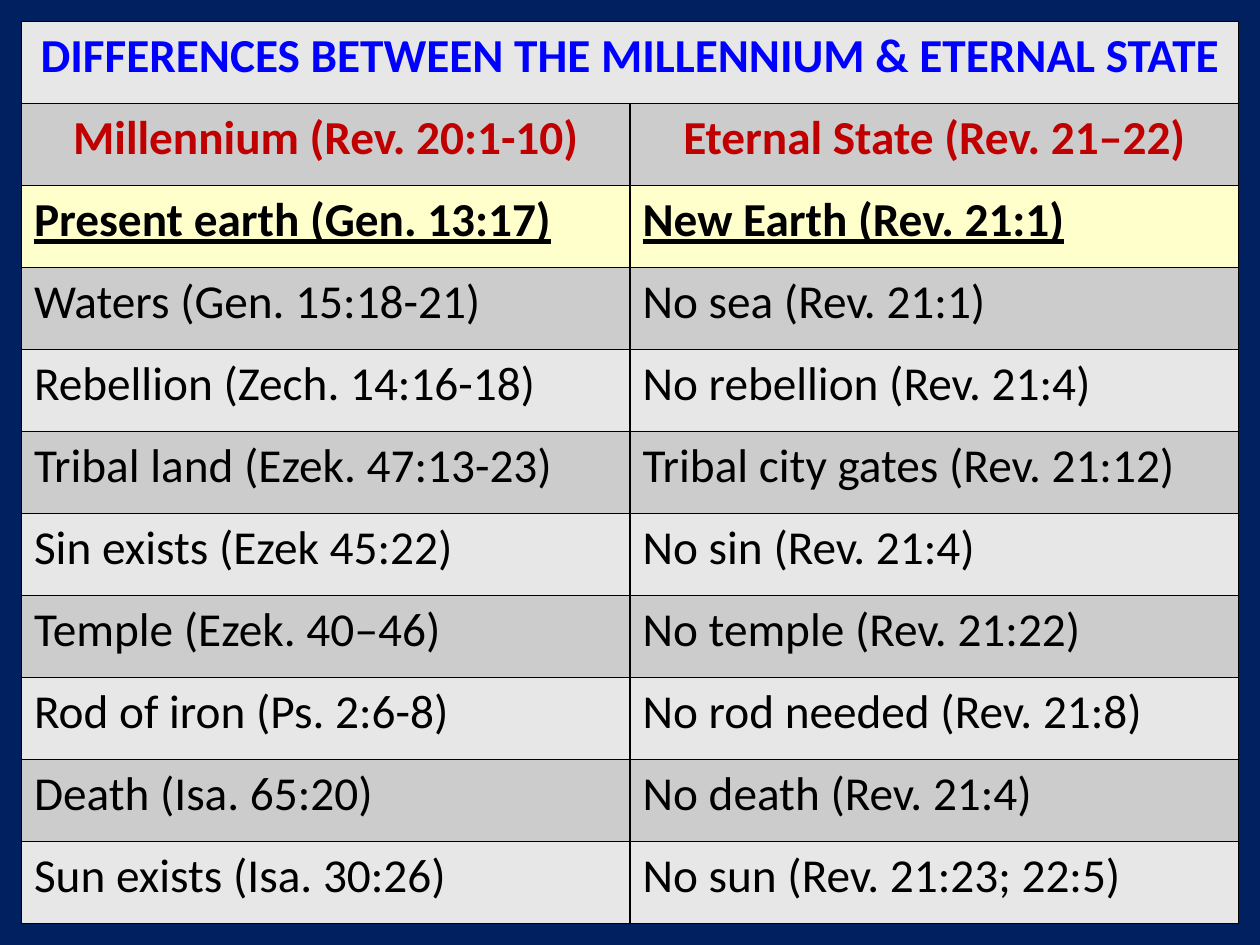
"""Build a table slide contrasting the Millennium with the Eternal State."""
from lxml.etree import SubElement
from pptx import Presentation
from pptx.dml.color import RGBColor
from pptx.enum.text import MSO_ANCHOR, PP_ALIGN
from pptx.oxml.ns import qn
from pptx.util import Inches, Pt

NAVY = RGBColor(0x00, 0x20, 0x60)
BLUE = RGBColor(0x00, 0x00, 0xFF)
RED = RGBColor(0xC0, 0x00, 0x00)
BLACK = RGBColor(0x00, 0x00, 0x00)
CREAM = RGBColor(0xFF, 0xFF, 0xCC)
LIGHT_GRAY = RGBColor(0xE7, 0xE7, 0xE7)
MID_GRAY = RGBColor(0xCC, 0xCC, 0xCC)

contrasts = [
    ("DIFFERENCES BETWEEN THE MILLENNIUM & ETERNAL STATE", ""),
    ("Millennium (Rev. 20:1-10)", "Eternal State (Rev. 21‒22)"),
    ("Present earth (Gen. 13:17)", "New Earth (Rev. 21:1)"),
    ("Waters (Gen. 15:18-21)", "No sea (Rev. 21:1)"),
    ("Rebellion (Zech. 14:16-18)", "No rebellion (Rev. 21:4)"),
    ("Tribal land (Ezek. 47:13-23)", "Tribal city gates (Rev. 21:12)"),
    ("Sin exists (Ezek 45:22)", "No sin (Rev. 21:4)"),
    ("Temple (Ezek. 40‒46)", "No temple (Rev. 21:22)"),
    ("Rod of iron (Ps. 2:6-8)", "No rod needed (Rev. 21:8)"),
    ("Death (Isa. 65:20)", "No death (Rev. 21:4)"),
    ("Sun exists (Isa. 30:26)", "No sun (Rev. 21:23; 22:5)"),
]
body_font = {"name": "Calibri", "size": Pt(27), "bold": False, "underline": False}
special_fonts = {0: {"bold": True}, 1: {"bold": True}, 2: {"bold": True, "underline": True}}
heading_colors = {0: BLUE, 1: RED}
paragraph_format = {"space_before": Pt(12), "space_after": Pt(12)}

presentation = Presentation()
presentation.slide_width, presentation.slide_height = Inches(10), Inches(7.5)
slide = presentation.slides.add_slide(presentation.slide_layouts[6])
slide.background.fill.solid()
slide.background.fill.fore_color.rgb = NAVY

margin = Inches(0.17)
comparison = slide.shapes.add_table(
    len(contrasts), 2, margin, margin,
    presentation.slide_width - 2 * margin, presentation.slide_height - 2 * margin,
).table
comparison.cell(0, 0).merge(comparison.cell(0, 1))

for row, contrast in enumerate(contrasts):
    for column, statement in enumerate(contrast):
        cell = comparison.cell(row, column)
        cell.vertical_anchor = MSO_ANCHOR.TOP
        properties = cell._tc.get_or_add_tcPr()
        for side in ("a:lnL", "a:lnR", "a:lnT", "a:lnB"):
            border = SubElement(properties, qn(side), w=str(Pt(1)))
            SubElement(SubElement(border, qn("a:solidFill")), qn("a:srgbClr"), val=str(BLACK))
        cell.fill.solid()
        cell.fill.fore_color.rgb = CREAM if row == 2 else (LIGHT_GRAY, MID_GRAY)[row % 2]
        if cell.is_spanned:
            continue
        paragraph = cell.text_frame.paragraphs[0]
        paragraph.alignment = PP_ALIGN.CENTER if row in heading_colors else PP_ALIGN.LEFT
        for attribute, value in paragraph_format.items():
            setattr(paragraph, attribute, value)
        run = paragraph.add_run()
        run.text = statement
        run.font.color.rgb = heading_colors.get(row, BLACK)
        for attribute, value in (body_font | special_fonts.get(row, {})).items():
            setattr(run.font, attribute, value)

presentation.save("out.pptx")
